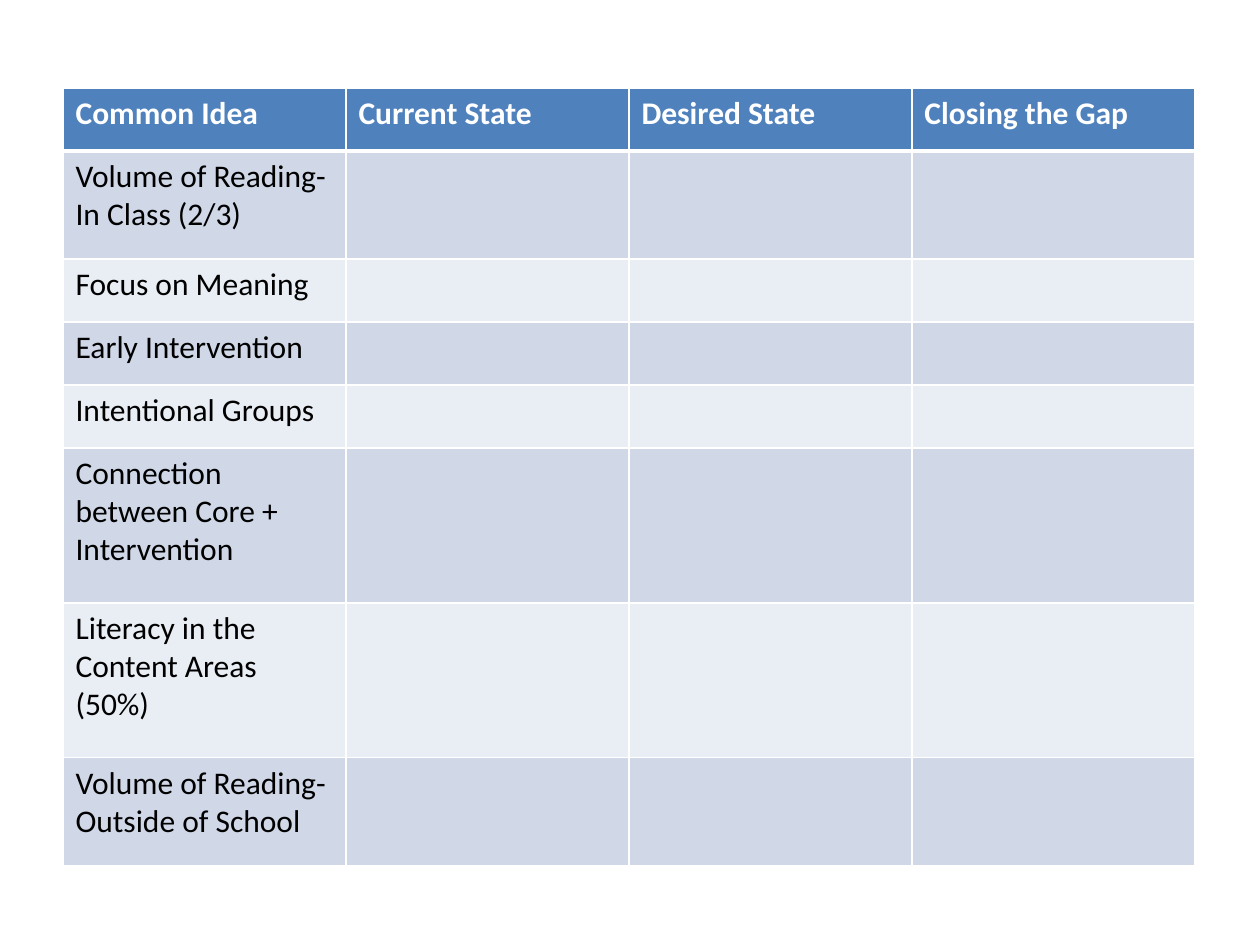
from lxml import etree
from pptx import Presentation
from pptx import util as u
from pptx.dml.color import RGBColor
from pptx.oxml import ns

PX = u.Inches(1) // 126  # EMU per px

WHITE = RGBColor(0xFF, 0xFF, 0xFF)
BLACK = RGBColor(0x00, 0x00, 0x00)
HEADER_BLUE = RGBColor(0x4F, 0x81, 0xBD)
BANDS = (RGBColor(0xD0, 0xD8, 0xE8), RGBColor(0xE9, 0xED, 0xF4))

FONT = "Calibri"
COL_WIDTH = 1134 // 4
HEADER_HEIGHT = 63
HEADERS = ["Common Idea", "Current State", "Desired State", "Closing the Gap"]
IDEAS = [  # text, row height in px
    ("Volume of Reading- In Class (2/3)", 108),
    ("Focus on Meaning", 63),
    ("Early Intervention", 63),
    ("Intentional Groups", 63),
    ("Connection between Core + Intervention", 155),
    ("Literacy in the Content Areas (50%)", 155),
    ("Volume of Reading- Outside of School", 108),
]


def px(n):
    return u.Emu(n * PX)


def set_borders(cell, top=1, bottom=1):
    """Draw white cell borders, with widths in points."""
    tc_pr = cell._tc.get_or_add_tcPr()
    for side, width in (("L", 1), ("R", 1), ("T", top), ("B", bottom)):
        ln = etree.SubElement(tc_pr, ns.qn(f"a:ln{side}"), w=str(u.Pt(width)))
        fill = etree.SubElement(ln, ns.qn("a:solidFill"))
        etree.SubElement(fill, ns.qn("a:srgbClr"), val=str(WHITE))


def set_fill(cell, color):
    cell.fill.solid()
    cell.fill.fore_color.rgb = color


def write(cell, words, color, bold=False):
    r = cell.text_frame.paragraphs[0].add_run()
    r.text = words
    r.font.name = FONT
    r.font.size = u.Pt(18)
    r.font.bold = bold
    r.font.color.rgb = color


def add_gap_table(s):
    heights = [HEADER_HEIGHT] + [height for _, height in IDEAS]
    table = s.shapes.add_table(
        len(heights), len(HEADERS), px(63), px(88),
        px(COL_WIDTH * len(HEADERS)), px(sum(heights))).table
    for column in table.columns:
        column.width = px(COL_WIDTH)
    for row, height in zip(table.rows, heights):
        row.height = px(height)

    # Header row, with a thick rule below it
    for cell, words in zip(table.rows[0].cells, HEADERS):
        set_borders(cell, bottom=3)
        set_fill(cell, HEADER_BLUE)
        write(cell, words, WHITE, bold=True)

    # Banded rows, one per idea
    for i, (words, _) in enumerate(IDEAS):
        for cell in table.rows[i + 1].cells:
            set_borders(cell, top=3 if i == 0 else 1)
            set_fill(cell, BANDS[i % 2])
        write(table.cell(i + 1, 0), words, BLACK)


def main():
    prs = Presentation()
    prs.slide_width, prs.slide_height = px(1260), px(945)
    s = prs.slides.add_slide(prs.slide_layouts[6])
    add_gap_table(s)
    prs.save("out.pptx")


if __name__ == "__main__":
    main()
